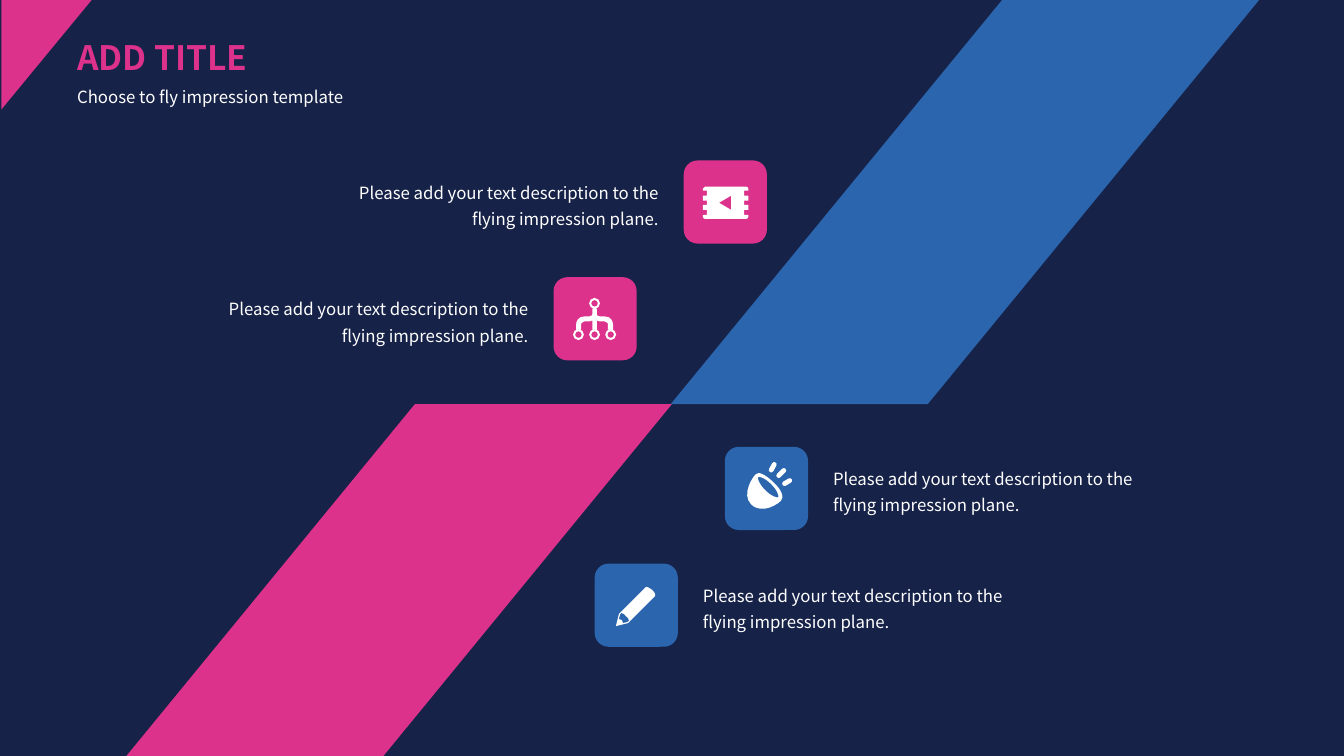
from math import hypot

from lxml import etree
from pptx import Presentation
from pptx.dml.color import RGBColor
from pptx.enum.shapes import MSO_SHAPE
from pptx.enum.text import MSO_AUTO_SIZE, PP_ALIGN
from pptx.oxml.ns import qn
from pptx.util import Emu, Pt

NAVY = RGBColor(0x16, 0x22, 0x48)
PINK = RGBColor(0xDC, 0x32, 0x8B)
BLUE = RGBColor(0x2B, 0x65, 0xAE)
WHITE = RGBColor(0xFF, 0xFF, 0xFF)
ROUNDED, TRIANGLE = MSO_SHAPE.ROUNDED_RECTANGLE, MSO_SHAPE.ISOSCELES_TRIANGLE
LEFT, RIGHT = PP_ALIGN.LEFT, PP_ALIGN.RIGHT
FIT = MSO_AUTO_SIZE.SHAPE_TO_FIT_TEXT

# The slide is a grid of square cells; icons use a finer grid inside their tile.
COLS, ROWS, CELL = 16, 9, 762000
TILE, ICON_UNIT = 0.99, 0.012
GAP = 0.18
TEXT_W, TEXT_H = 4.36, 0.74
STEP_X, STEP_Y = 1.55, 1.39
MIDDLE, BAND_W, SLANT = 4.81, 3.06, 0.82
DESCRIPTION = "Please add your text description to the flying impression plane."


# A contour is a list of segments: (x, y) is a line, six numbers a cubic curve.
def pairs(seg):
    return list(zip(seg[::2], seg[1::2]))


def circle(x, y, r):
    k = 0.55 * r
    return [(x + r, y),
            (x + r, y + k, x + k, y + r, x, y + r),
            (x - k, y + r, x - r, y + k, x - r, y),
            (x - r, y - k, x - k, y - r, x, y - r),
            (x + k, y - r, x + r, y - k, x + r, y)]


def capsule(x1, y1, x2, y2, r):
    length = hypot(x2 - x1, y2 - y1)
    ux, uy = r * (x2 - x1) / length, r * (y2 - y1) / length
    bx, by = 4 / 3 * ux, 4 / 3 * uy
    return [(x1 + uy, y1 - ux), (x2 + uy, y2 - ux),
            (x2 + uy + bx, y2 - ux + by, x2 - uy + bx, y2 + ux + by,
             x2 - uy, y2 + ux),
            (x1 - uy, y1 + ux),
            (x1 - uy - bx, y1 + ux - by, x1 + uy - bx, y1 - ux - by,
             x1 + uy, y1 - ux)]


def mirrored(half, axis):
    """Close a right half with its reflection in a vertical axis."""
    points = [(2 * axis - x, y) for seg in half for x, y in pairs(seg)][::-1]
    contour, i = half + [points[0]], 1
    for seg in half[:0:-1]:
        count = len(seg) // 2
        contour.append(tuple(n for pt in points[i:i + count] for n in pt))
        i += count
    return contour


def film_icon():
    edge = [(62, 26), (63, 26, 64, 27, 64, 28)]
    for top, bottom in ((30, 35), (40, 44), (49, 54)):
        edge += [(64, top), (60, top), (60, bottom), (64, bottom)]
    edge += [(64, 56), (64, 57, 63, 58, 62, 58)]
    return [mirrored(edge, 41.5), [(47, 49), (47, 35), (35, 42)]]


def network_icon():
    axis = 40.7
    half = [(43, 31.2), (43, 37), (43, 37, 43, 39, 46, 39), (51, 39),
            (57, 39, 59, 44, 59, 47), (59, 52), (54, 52), (54, 47),
            (54, 47, 54, 44, 51, 44), (46, 44), (45, 44, 44, 43, 43, 43), (43, 52)]
    nodes = [(axis, 26)] + [(axis + dx, 57) for dx in (-16, 0, 16)]
    rings = [circle(x, y, r) for x, y in nodes for r in (5.4, 3.3)]
    return [mirrored(half, axis)] + rings


def lamp_icon():
    body = [(31, 27), (28, 29, 16, 47, 26, 57), (37, 68, 54, 56, 56, 53),
            (59, 50, 56, 42, 48, 35), (41, 28, 33, 24, 31, 27)]
    opening = [(53, 50), (52, 51, 46, 49, 40, 43), (34, 37, 32, 31, 33, 30),
               (34, 29, 40, 31, 46, 37), (52, 43, 54, 49, 53, 50)]
    rays = [(53.5, 28.5, 58.5, 23.5), (46, 23, 49, 17.5), (59.3, 36.5, 64.3, 33.5)]
    return [body, opening] + [capsule(*ray, 2.4) for ray in rays]


def pencil_icon():
    body = [(57, 26), (53, 23, 51, 23, 51, 23), (24, 50), (21, 62), (33, 59),
            (60, 32), (60, 32, 61, 30, 57, 26)]
    tip = [(32, 58), (28, 59), (28, 58, 28, 57, 27, 56), (26, 56, 25, 55, 24, 55),
           (25, 51), (26, 49), (26, 49, 29, 49, 31, 52), (34, 54, 34, 57, 34, 57)]
    return [body, tip]


class Deck:
    font = "Noto Sans CJK SC"

    def __init__(self):
        self.prs = Presentation()
        self.prs.slide_width, self.prs.slide_height = Emu(COLS * CELL), Emu(ROWS * CELL)
        self.slide = self.prs.slides.add_slide(self.prs.slide_layouts[6])
        self.shapes = self.slide.shapes
        fill = self.slide.background.fill
        fill.solid()
        fill.fore_color.rgb = NAVY

    def cells(self, *lengths):
        return [Emu(round(n * CELL)) for n in lengths]

    def paint(self, sp, color):
        sp.shadow.inherit = False
        sp.fill.solid()
        sp.fill.fore_color.rgb = color
        sp.line.fill.background()
        return sp

    def shape(self, kind, x, y, w, h, color, parent=None):
        sp = (parent or self.shapes).add_shape(kind, *self.cells(x, y, w, h))
        return self.paint(sp, color)

    def outline(self, contours, color, x=0, y=0, unit=1, parent=None):
        """Draw closed contours as one shape; inner contours become holes."""
        placed = [[[self.cells(x + px * unit, y + py * unit) for px, py in pairs(seg)]
                   for seg in contour] for contour in contours]
        builder = (parent or self.shapes).build_freeform(*placed[0][0][-1])
        for i, contour in enumerate(placed):
            if i:
                builder.move_to(*contour[0][-1])
            builder.add_line_segments([seg[-1] for seg in contour[1:]], close=True)
        sp = builder.convert_to_shape()
        drawn = list(sp.element.iter(qn("a:lnTo")))
        segments = [seg for contour in placed for seg in contour[1:]]
        for line, seg in zip(drawn, segments):
            if len(seg) == 3:
                line.tag = qn("a:cubicBezTo")
                for i, (px, py) in enumerate(seg[:2]):
                    line.insert(i, etree.Element(qn("a:pt"), x=str(px - sp.left),
                                                 y=str(py - sp.top)))
        self.paint(sp, color)

    def text(self, text, x, y, w, h, size=12, color=WHITE, bold=False,
             align=LEFT, spacing=1.3, wrap=True, parent=None):
        sp = (parent or self.shapes).add_textbox(*self.cells(x, y, w, h))
        tf = sp.text_frame
        tf.word_wrap, tf.auto_size = wrap, FIT
        p = tf.paragraphs[0]
        p.text, p.alignment, p.line_spacing = text, align, spacing
        font = p.runs[0].font
        font.name, font.size, font.bold = self.font, Pt(size), bold
        font.color.rgb = color

    def band(self, x, top, bottom, color):
        """Slanted band whose left side starts at x on the top edge."""
        end = x - SLANT * (bottom - top)
        self.outline([[(x, top), (x + BAND_W, top), (end + BAND_W, bottom),
                       (end, bottom)]], color)

    def callout(self, x, y, icon, color, text_on_left):
        group = self.shapes.add_group_shape().shapes
        self.shape(ROUNDED, x, y, TILE, TILE, color, group)
        self.outline(icon, WHITE, x, y, ICON_UNIT, group)
        text_x = x - GAP - TEXT_W if text_on_left else x + TILE + GAP
        self.text(DESCRIPTION, text_x, y + 0.13, TEXT_W, TEXT_H,
                  align=RIGHT if text_on_left else LEFT, parent=group)


def main():
    deck = Deck()
    deck.text("ADD TITLE", 0.8, 0.38, 2.38, 0.6, size=24, color=PINK, bold=True,
              spacing=1.0, wrap=False)
    deck.text("Choose to fly impression template", 0.8, 0.9, 4.2, 0.43)
    corner = deck.shape(TRIANGLE, -0.1, 0.11, 1.31, 1.08, PINK)
    corner.adjustments[0] = 0
    corner.rotation = 90
    deck.band(4.94, MIDDLE, ROWS, PINK)
    deck.band(11.93, 0, MIDDLE, BLUE)

    sides = [(8.63, 5.32, BLUE, False, (lamp_icon(), pencil_icon())),
             (8.14, 1.91, PINK, True, (film_icon(), network_icon()))]
    for x, y, color, text_on_left, icons in sides:
        for i, icon in enumerate(icons):
            deck.callout(x - i * STEP_X, y + i * STEP_Y, icon, color, text_on_left)
    deck.prs.save("out.pptx")


if __name__ == "__main__":
    main()
